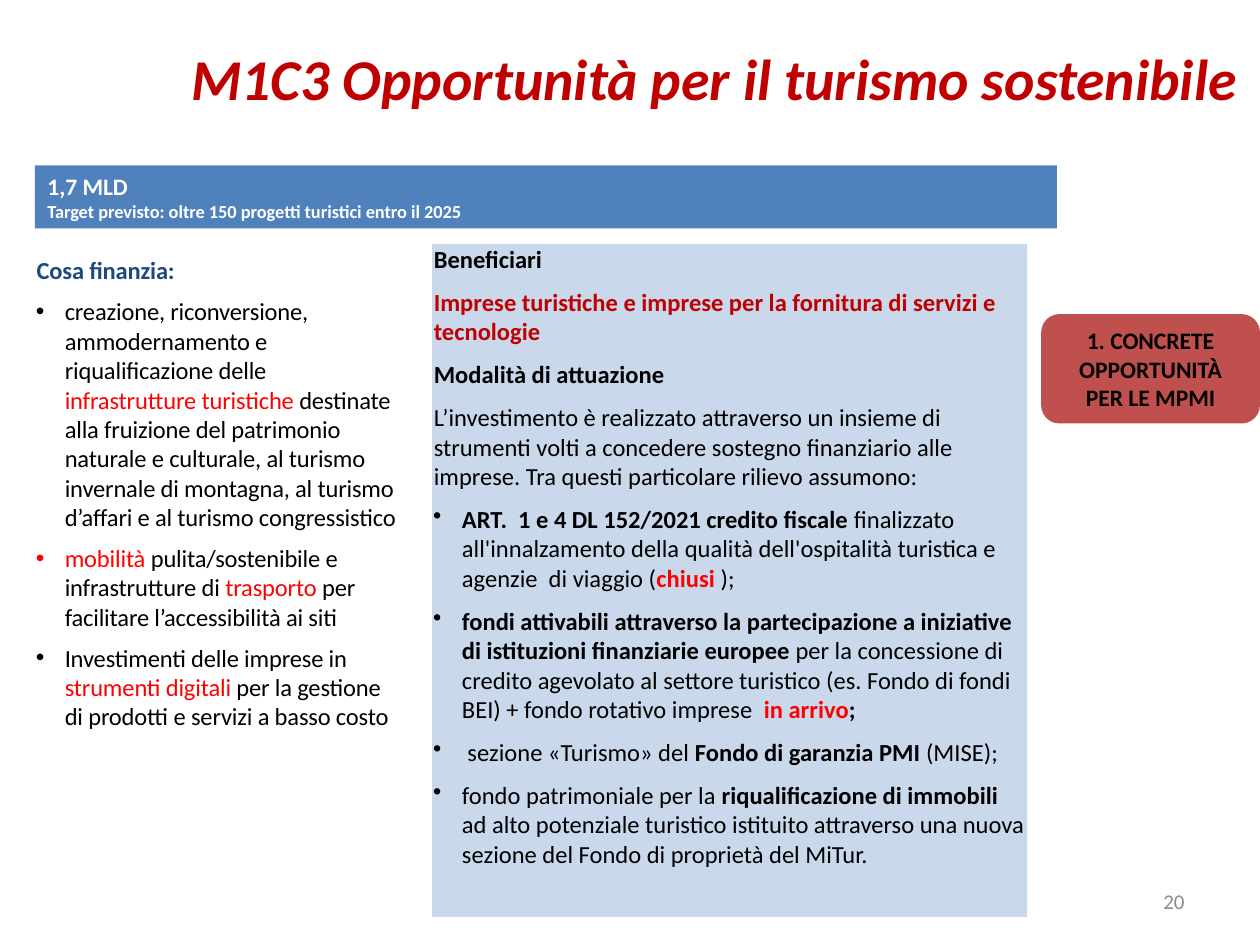
"""Build the slide on sustainable tourism opportunities under M1C3."""
from dataclasses import dataclass
from typing import NamedTuple

import pptx
import pptx.dml.color
import pptx.enum.shapes
import pptx.enum.text
import pptx.oxml.ns
import pptx.util
from lxml import etree

Pt = pptx.util.Pt
ALIGN = pptx.enum.text.PP_ALIGN
ANCHOR = pptx.enum.text.MSO_ANCHOR
SHAPE = pptx.enum.shapes.MSO_SHAPE
COLORS = {
    "black": "000000", "white": "FFFFFF", "grey": "8C8C8C", "navy": "1F497D",
    "blue": "4F81BD", "pale": "95B3D7", "red": "FF0000", "dark_red": "C00000", "brick": "C0504D",
}


class Run(NamedTuple):
    """A piece of text with one format."""

    text: str
    bold: bool = False
    color: str = "black"


@dataclass
class Para:
    """A paragraph made of runs, with or without a bullet."""

    runs: list[Run]
    bullet: bool = True


class Box(NamedTuple):
    """A place on the slide, in points."""

    left: float
    top: float
    width: float
    height: float


FINANCED = [
    Para([Run("Cosa finanzia:", True, "navy")], False),
    Para([
        Run("creazione, riconversione, ammodernamento e riqualificazione delle "),
        Run("infrastrutture turistiche ", color="red"),
        Run("destinate alla fruizione del patrimonio naturale e culturale, al turismo invernale "
            "di montagna, al turismo d’affari e al turismo congressistico"),
    ]),
    Para([
        Run("mobilità", color="red"),
        Run(" pulita/sostenibile e infrastrutture di "),
        Run("trasporto", color="red"),
        Run(" per facilitare l’accessibilità ai siti"),
    ]),
    Para([
        Run("Investimenti delle imprese in "),
        Run("strumenti digitali ", color="red"),
        Run("per la gestione di prodotti e servizi a basso costo"),
    ]),
]
BENEFICIARIES = [
    Para([Run("Beneficiari", True)], False),
    Para([Run("Imprese turistiche e imprese per la fornitura di servizi e tecnologie",
              True, "dark_red")], False),
    Para([Run("Modalità di attuazione", True)], False),
    Para([Run("L’investimento è realizzato attraverso un insieme di strumenti volti a concedere "
              "sostegno finanziario alle imprese. Tra questi particolare rilievo assumono:")], False),
    Para([
        Run("ART.  1 e 4 DL 152/2021 credito fiscale ", True),
        Run("finalizzato all'innalzamento della qualità dell'ospitalità turistica "
            "e agenzie  di viaggio ("),
        Run("chiusi ", True, "red"),
        Run(");"),
    ]),
    Para([
        Run("fondi attivabili attraverso la partecipazione a iniziative "
            "di istituzioni finanziarie europee ", True),
        Run("per la concessione di credito agevolato al settore turistico "
            "(es. Fondo di fondi BEI) + fondo rotativo imprese  "),
        Run("in arrivo", True, "red"),
        Run(";", True),
    ]),
    Para([
        Run(" sezione «Turismo» del "),
        Run("Fondo di garanzia PMI ", True),
        Run("(MISE);"),
    ]),
    Para([
        Run("fondo patrimoniale per la "),
        Run("riqualificazione di immobili ", True),
        Run("ad alto potenziale turistico istituito attraverso una nuova sezione "
            "del Fondo di proprietà del MiTur."),
    ]),
]


def rgb(name: str) -> pptx.dml.color.RGBColor:
    """Look up a colour by its name."""
    return pptx.dml.color.RGBColor.from_string(COLORS[name])


def add_text(p, text: str, *, size: float, color: str = "black", bold: bool = False,
             italic: bool = False, spacing: int = 0) -> None:
    """Append a formatted run to a paragraph."""
    r = p.add_run()
    r.text = text
    r.font.name = "Calibri"
    r.font.size = Pt(size)
    r.font.bold = bold
    r.font.italic = italic
    r.font.color.rgb = rgb(color)
    if spacing:
        r._r.get_or_add_rPr().set("spc", str(spacing))


def set_frame(sp, margins: tuple = (7.2, 3.6, 7.2, 3.6), anchor=ANCHOR.TOP):
    """Set up a shape's text frame and return it."""
    tf = sp.text_frame
    tf.auto_size = pptx.enum.text.MSO_AUTO_SIZE.NONE
    tf.word_wrap = True
    tf.vertical_anchor = anchor
    tf.margin_left, tf.margin_top, tf.margin_right, tf.margin_bottom = map(Pt, margins)
    return tf


def add_paragraph(tf, first: bool, align=ALIGN.LEFT):
    """Return the frame's first paragraph or a new one."""
    p = tf.paragraphs[0] if first else tf.add_paragraph()
    p.alignment = align
    return p


def fill_column(tf, paras: list[Para], gap: float, spacing: int = 0) -> None:
    """Write headings and bulleted paragraphs into a frame."""
    for i, para in enumerate(paras):
        p = add_paragraph(tf, i == 0)
        pPr = p._p.get_or_add_pPr()
        pPr.set("marL", str(Pt(17 if para.bullet else 0.9)))
        pPr.set("indent", str(Pt(-16.5 if para.bullet else 0)))
        tag = "a:buChar" if para.bullet else "a:buNone"
        bu = etree.SubElement(pPr, pptx.oxml.ns.qn(tag))
        if para.bullet:
            bu.set("char", "•")
        p.space_before = Pt(gap if i else 0)
        for run in para.runs:
            add_text(p, run.text, size=14, color=run.color, bold=run.bold, spacing=spacing)


def place(sp, box: Box) -> None:
    """Move and size a placeholder."""
    sp.left, sp.top, sp.width, sp.height = map(Pt, box)


def add_block(s, kind, box: Box, color: str):
    """Draw a filled shape without outline or shadow."""
    sp = s.shapes.add_shape(kind, *map(Pt, box))
    sp.shadow.inherit = False
    sp.fill.solid()
    sp.fill.fore_color.rgb = rgb(color)
    sp.line.fill.background()
    return sp


def main() -> None:
    """Build and save the slide."""
    prs = pptx.Presentation()
    prs.slide_width, prs.slide_height = Pt(720), Pt(540)
    s = prs.slides.add_slide(prs.slide_layouts[1])
    title, body = s.placeholders

    place(title, Box(102, 21, 618, 47.5))
    p = add_paragraph(set_frame(title), True)
    add_text(p, "M1C3 Opportunità per il turismo sostenibile",
             size=33, color="dark_red", bold=True, italic=True)

    place(body, Box(20, 139.5, 209.5, 279.5))
    fill_column(set_frame(body, (0, 6.5, 0, 0)), FINANCED, 6.5, -10)

    panel = add_block(s, SHAPE.RECTANGLE, Box(247, 139.5, 340, 384.5), "pale")
    clr = panel.fill._xPr.find(".//" + pptx.oxml.ns.qn("a:srgbClr"))
    etree.SubElement(clr, pptx.oxml.ns.qn("a:alpha")).set("val", "50000")
    fill_column(set_frame(panel, (0, 0, 0, 0)), BENEFICIARIES, 7.7)

    banner = add_block(s, SHAPE.RECTANGLE, Box(20, 94.5, 584, 36), "blue")
    tf = set_frame(banner)
    lines = [("1,7 MLD", 13.5),
             ("Target previsto: oltre 150 progetti turistici entro il 2025", 10.5)]
    for i, (text, size) in enumerate(lines):
        add_text(add_paragraph(tf, i == 0), text, size=size, color="white", bold=True)

    number = s.shapes.add_textbox(*map(Pt, Box(516, 500.5, 168, 28.75)))
    p = add_paragraph(set_frame(number, anchor=ANCHOR.MIDDLE), True, ALIGN.RIGHT)
    add_text(p, "20", size=12, color="grey")

    badge = add_block(s, SHAPE.ROUNDED_RECTANGLE, Box(595, 179.5, 125, 62.5), "brick")
    p = add_paragraph(set_frame(badge, anchor=ANCHOR.MIDDLE), True, ALIGN.CENTER)
    add_text(p, "1. CONCRETE OPPORTUNITÀ PER LE MPMI", size=13.5, bold=True)

    prs.save("out.pptx")


if __name__ == "__main__":
    main()
